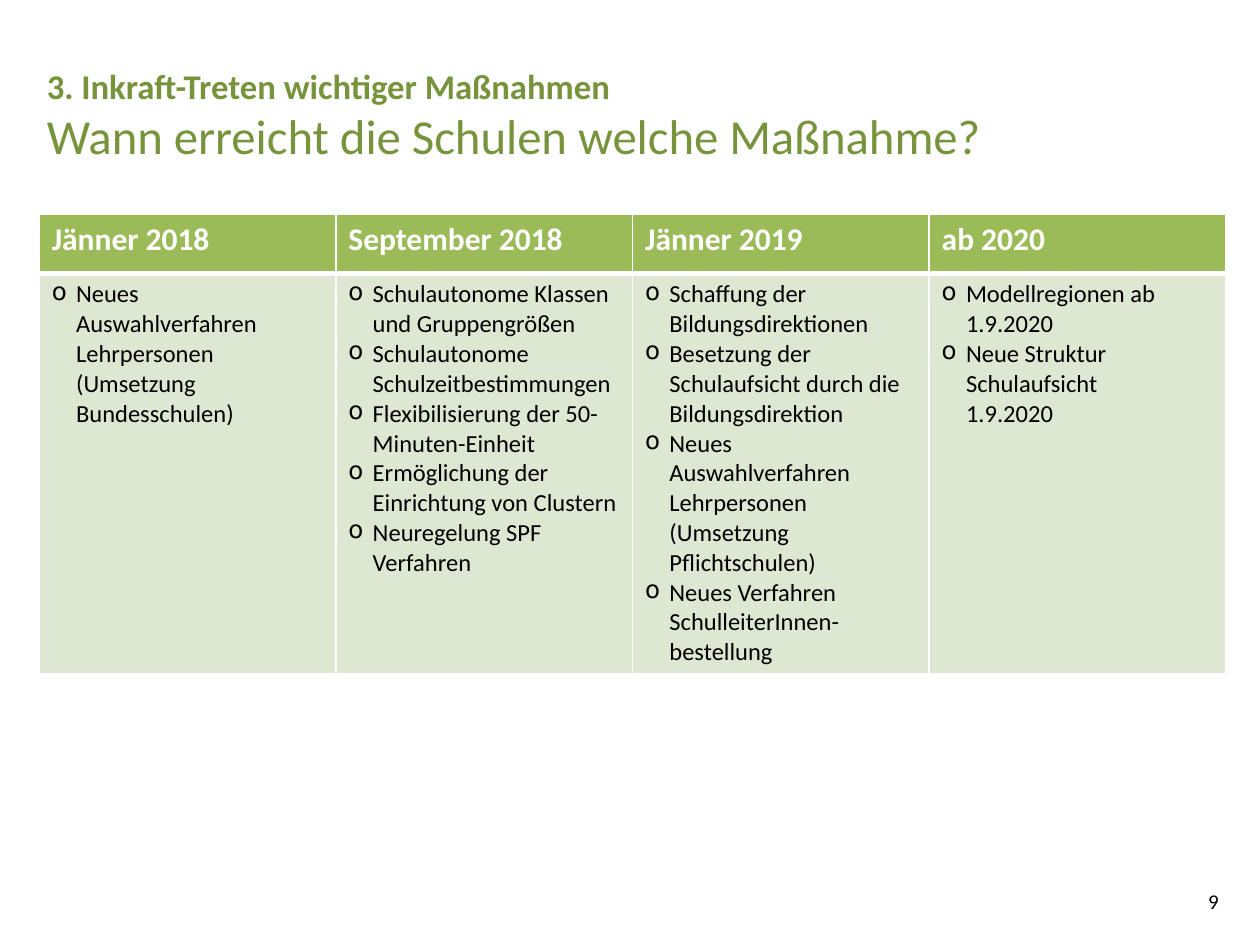
"""Build the slide on when the school measures come into force."""
from copy import deepcopy

from lxml import etree
from pptx import Presentation
from pptx.dml.color import RGBColor
from pptx.enum.text import MSO_ANCHOR, MSO_AUTO_SIZE, PP_ALIGN
from pptx.oxml.ns import qn
from pptx.util import Cm, Pt

TOP, MIDDLE = MSO_ANCHOR.TOP, MSO_ANCHOR.MIDDLE
FIXED = MSO_AUTO_SIZE.NONE
LEFT, RIGHT = PP_ALIGN.LEFT, PP_ALIGN.RIGHT

HEAD = "3. Inkraft-Treten wichtiger Maßnahmen"
LEAD = "Wann erreicht die Schulen welche Maßnahme?"
PAGE = "9"
STEPS = {
    "Jänner 2018": [
        "Neues Auswahlverfahren Lehrpersonen",
        "(Umsetzung Bundesschulen)",
    ],
    "September 2018": [
        "Schulautonome Klassen und Gruppengrößen",
        "Schulautonome Schulzeitbestimmungen",
        "Flexibilisierung der 50-Minuten-Einheit",
        "Ermöglichung der Einrichtung von Clustern",
        "Neuregelung SPF Verfahren",
    ],
    "Jänner 2019": [
        "Schaffung der Bildungsdirektionen",
        "Besetzung der Schulaufsicht durch die Bildungsdirektion",
        "Neues Auswahlverfahren Lehrpersonen",
        "(Umsetzung Pflichtschulen)",
        "Neues Verfahren SchulleiterInnen-bestellung",
    ],
    "ab 2020": [
        "Modellregionen ab 1.9.2020",
        "Neue Struktur Schulaufsicht\n1.9.2020",
    ],
}
COLORS = {
    "title": "77933C",
    "head": "9BBB59",
    "body": "DEE7D1",
    "white": "FFFFFF",
    "black": "000000",
}
INDENT = Cm(0.49)


def write(par, text, size=14, color="black", bold=False):
    """Add text to a paragraph, with a line break at each newline."""
    for num, line in enumerate(text.split("\n")):
        if num:
            par.add_line_break()
            par._p[-1].append(deepcopy(run._r.get_or_add_rPr()))
        run = par.add_run()
        run.text = line
        font = run.font
        font.name, font.size, font.bold = "Calibri", Pt(size), bold
        font.color.rgb = RGBColor.from_string(COLORS[color])


def indent(par, bullet):
    """Indent a paragraph and hang a bullet if asked."""
    props = par._p.get_or_add_pPr()
    props.set("marL", str(INDENT))
    props.set("indent", str(-INDENT if bullet else 0))
    if bullet:
        etree.SubElement(props, qn("a:buChar"), char="o")
    else:
        etree.SubElement(props, qn("a:buNone"))


def paint(cell, color, low, high):
    """Fill a cell and draw its white borders."""
    cell.fill.solid()
    cell.fill.fore_color.rgb = RGBColor.from_string(COLORS[color])
    props = cell._tc.get_or_add_tcPr()
    sides = {"L": 1, "R": 1, "T": high, "B": low}
    for pos, (side, width) in enumerate(sides.items()):
        line = etree.Element(qn(f"a:ln{side}"), w=str(Pt(width)))
        fill = etree.SubElement(line, qn("a:solidFill"))
        etree.SubElement(fill, qn("a:srgbClr"), val=COLORS["white"])
        props.insert(pos, line)


def add_title(slide):
    """Set the two-line title."""
    title = slide.shapes.title
    title.left, title.top = Cm(0.69), Cm(1.17)
    title.width, title.height = Cm(22.86), Cm(2.57)
    frame = title.text_frame
    frame.auto_size, frame.vertical_anchor = FIXED, TOP
    par = frame.paragraphs[0]
    par.alignment = LEFT
    write(par, HEAD + "\n", size=19.8, color="title", bold=True)
    write(par, LEAD, size=27.9, color="title")


def add_steps(slide):
    """Add the table with one column for each date."""
    rows = Cm(1.19), Cm(7.98)
    table = slide.shapes.add_table(
        2, len(STEPS), Cm(0.79), Cm(4.32), Cm(23.92), sum(rows)
    ).table
    for row, high in zip(table.rows, rows):
        row.height = high
    for col, (date, items) in enumerate(STEPS.items()):
        head, body = table.cell(0, col), table.cell(1, col)
        paint(head, "head", low=3, high=1)
        paint(body, "body", low=1, high=3)
        write(head.text_frame.paragraphs[0], date, size=18, color="white", bold=True)
        frame = body.text_frame
        for num, item in enumerate(items):
            par = frame.add_paragraph() if num else frame.paragraphs[0]
            indent(par, bullet=not item.startswith("("))
            write(par, item)


def add_page(slide):
    """Add the page number."""
    box = slide.shapes.add_textbox(Cm(18.9), Cm(17.65), Cm(5.92), Cm(1.02))
    frame = box.text_frame
    frame.word_wrap, frame.vertical_anchor = True, MIDDLE
    par = frame.paragraphs[0]
    par.alignment = RIGHT
    write(par, PAGE, size=12)


def main():
    """Build and save the deck."""
    deck = Presentation()
    deck.slide_width, deck.slide_height = Cm(25.4), Cm(19.05)
    slide = deck.slides.add_slide(deck.slide_layouts[5])
    add_title(slide)
    add_steps(slide)
    add_page(slide)
    deck.save("out.pptx")


if __name__ == "__main__":
    main()
